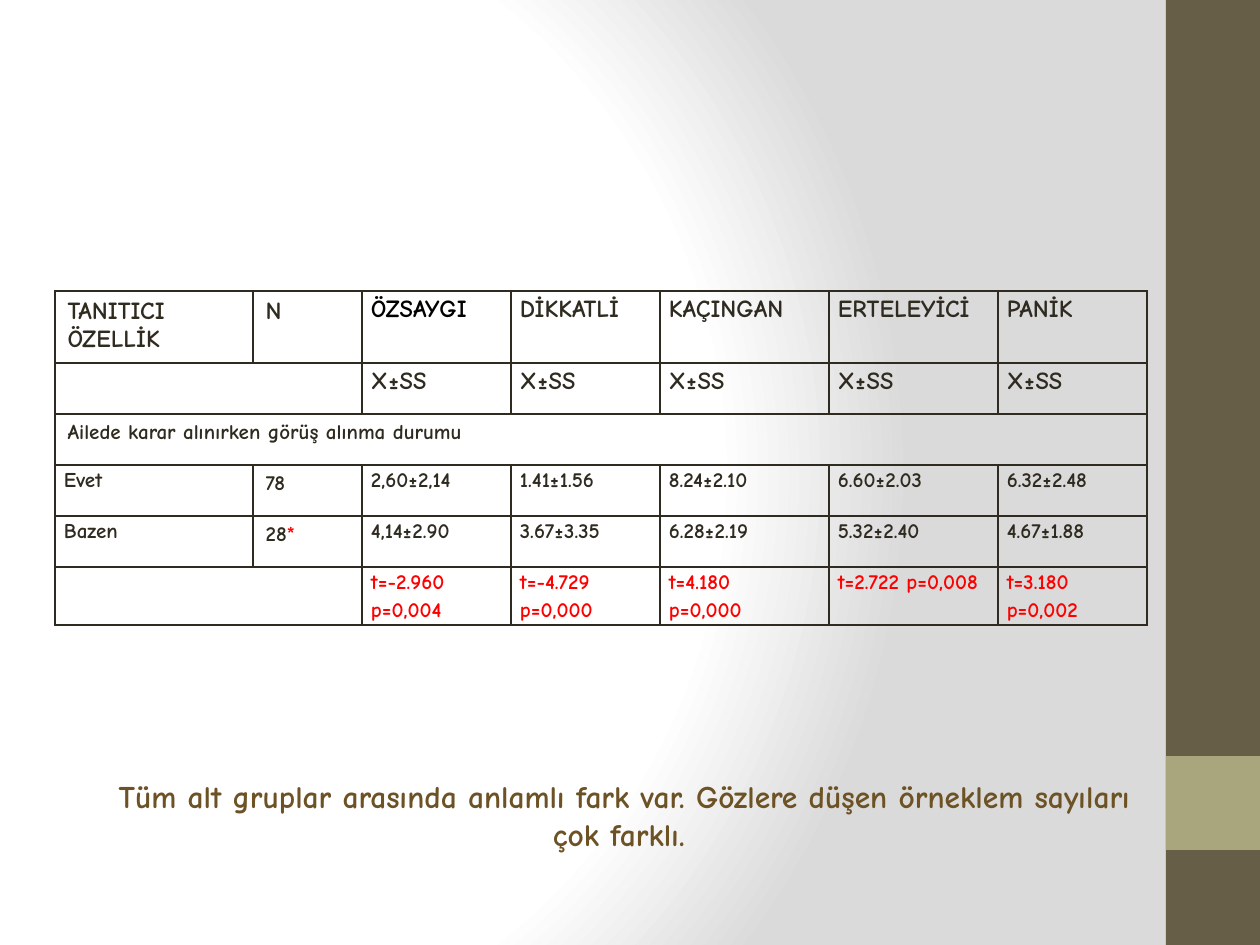
import pptx
import pptx.dml.color
import pptx.enum.shapes
import pptx.enum.text
import pptx.oxml
import pptx.oxml.ns
import pptx.util

EMU_PER_PX = 914400 / 126
FONT = "Comic Neue"
INK, RED, BLACK = "2F2B20", "FF0000", "000000"
BAND, ACCENT, BROWN = "675E47", "A9A57C", "6D5225"
COLUMNS = [198, 109, 149, 149, 169, 169, 149]
HEIGHTS = [72, 51, 51, 51, 51, 58]
ROWS = [
    ["TANITICI\nÖZELLİK", "N", "ÖZSAYGI", "DİKKATLİ", "KAÇINGAN", "ERTELEYİCİ", "PANİK"],
    ["", ""] + ["X±SS"] * 5,
    ["Ailede karar alınırken görüş alınma durumu"] + [""] * 6,
    ["Evet", "78", "2,60±2,14", "1.41±1.56", "8.24±2.10", "6.60±2.03", "6.32±2.48"],
    ["Bazen", "28*", "4,14±2.90", "3.67±3.35", "6.28±2.19", "5.32±2.40", "4.67±1.88"],
    ["", "", "t=-2.960 p=0,004", "t=-4.729\np=0,000", "t=4.180\np=0,000",
     "t=2.722 p=0,008", "t=3.180\np=0,002"],
]
MERGES = [(1, 0, 1), (2, 0, 6), (5, 0, 1)]  # row, first column, last column


def px(length):
    return pptx.util.Emu(round(length * EMU_PER_PX))


def color(value):
    return pptx.dml.color.RGBColor.from_string(value)


def add_span(para, text, size, ink):
    span = para.add_run()
    span.text = text
    for name, value in {"name": FONT, "size": pptx.util.Pt(size), "bold": True}.items():
        setattr(span.font, name, value)
    span.font.color.rgb = color(ink)


def apply_format(target, **values):
    for name, value in values.items():
        setattr(target, name, value)


def paint_background(page):
    stops = "".join(
        f'<a:gs pos="{position * 1000}"><a:srgbClr val="{value}"/></a:gs>'
        for position, value in [(0, "FFFFFF"), (75, "FFFFFF"), (100, "DADADA")])
    gradient = pptx.oxml.parse_xml(
        f'<a:gradFill {pptx.oxml.ns.nsdecls("a")} rotWithShape="1"><a:gsLst>{stops}</a:gsLst>'
        '<a:path path="circle"><a:fillToRect l="20000" t="50000" r="100000" b="50000"/>'
        '</a:path></a:gradFill>')
    page.background.fill.solid()
    solid = page.background._cSld.find(".//" + pptx.oxml.ns.qn("a:solidFill"))
    solid.getparent().replace(solid, gradient)


def add_side_band(page, left, top, width, height):
    # Full-height band with a square accent near its foot
    parts = [(top, height, BAND), (top + height * 4 // 5, width, ACCENT)]
    for part_top, part_height, fill in parts:
        shape = page.shapes.add_shape(
            pptx.enum.shapes.MSO_SHAPE.RECTANGLE,
            px(left), px(part_top), px(width), px(part_height))
        shape.shadow.inherit = False
        shape.fill.solid()
        shape.fill.fore_color.rgb = color(fill)
        shape.line.fill.background()


def add_borders(cell):
    properties = cell._tc.get_or_add_tcPr()
    for index, side in enumerate(["lnL", "lnR", "lnT", "lnB"]):
        properties.insert(index, pptx.oxml.parse_xml(
            f'<a:{side} {pptx.oxml.ns.nsdecls("a")} w="12700"><a:solidFill>'
            f'<a:srgbClr val="{INK}"/></a:solidFill></a:{side}>'))


def fill_cell(cell, text, row, column):
    cell.fill.background()
    add_borders(cell)
    if not text:
        return
    # Measured values and row names sit tighter than the label cells
    tight = column >= 2 or (column == 0 and row in (3, 4))
    if tight:
        apply_format(cell, margin_left=px(9), margin_right=px(9),
                     margin_top=0, margin_bottom=0)
    size = 14 if row < 2 else 12
    ink = RED if row == 5 else BLACK if (row, column) == (0, 2) else INK
    for index, line in enumerate(text.split("\n")):
        frame = cell.text_frame
        para = frame.add_paragraph() if index else frame.paragraphs[0]
        if tight:
            para.line_spacing = 1.15
        add_span(para, line.rstrip("*"), size, ink)
        if line.endswith("*"):
            add_span(para, "*", size, RED)


def add_results_table(page, left, top):
    table = page.shapes.add_table(
        len(ROWS), len(COLUMNS), px(left), px(top),
        px(sum(COLUMNS)), px(sum(HEIGHTS))).table
    apply_format(table, first_row=False, horz_banding=False)
    for column, width in zip(table.columns, COLUMNS):
        column.width = px(width)
    for row, height in zip(table.rows, HEIGHTS):
        row.height = px(height)
    for row, texts in enumerate(ROWS):
        for column, text in enumerate(texts):
            fill_cell(table.cell(row, column), text, row, column)
    for row, first, last in MERGES:
        table.cell(row, first).merge(table.cell(row, last))


def add_conclusion(page, left, top, width, height):
    box = page.shapes.add_textbox(px(left), px(top), px(width), px(height))
    apply_format(box.text_frame, word_wrap=True,
                 auto_size=pptx.enum.text.MSO_AUTO_SIZE.SHAPE_TO_FIT_TEXT)
    para = box.text_frame.paragraphs[0]
    para.alignment = pptx.enum.text.PP_ALIGN.CENTER
    add_span(para, "Tüm alt gruplar arasında anlamlı fark var. "
             "Gözlere düşen örneklem sayıları çok farklı. ", 18, BROWN)


def main():
    deck = pptx.Presentation()
    deck.slide_width, deck.slide_height = px(1260), px(945)
    page = deck.slides.add_slide(deck.slide_layouts[6])
    paint_background(page)
    add_side_band(page, 1166, 0, 94, 945)
    add_results_table(page, 55, 291)
    add_conclusion(page, 84, 771, 1081, 89)
    deck.save("out.pptx")


if __name__ == "__main__":
    main()
